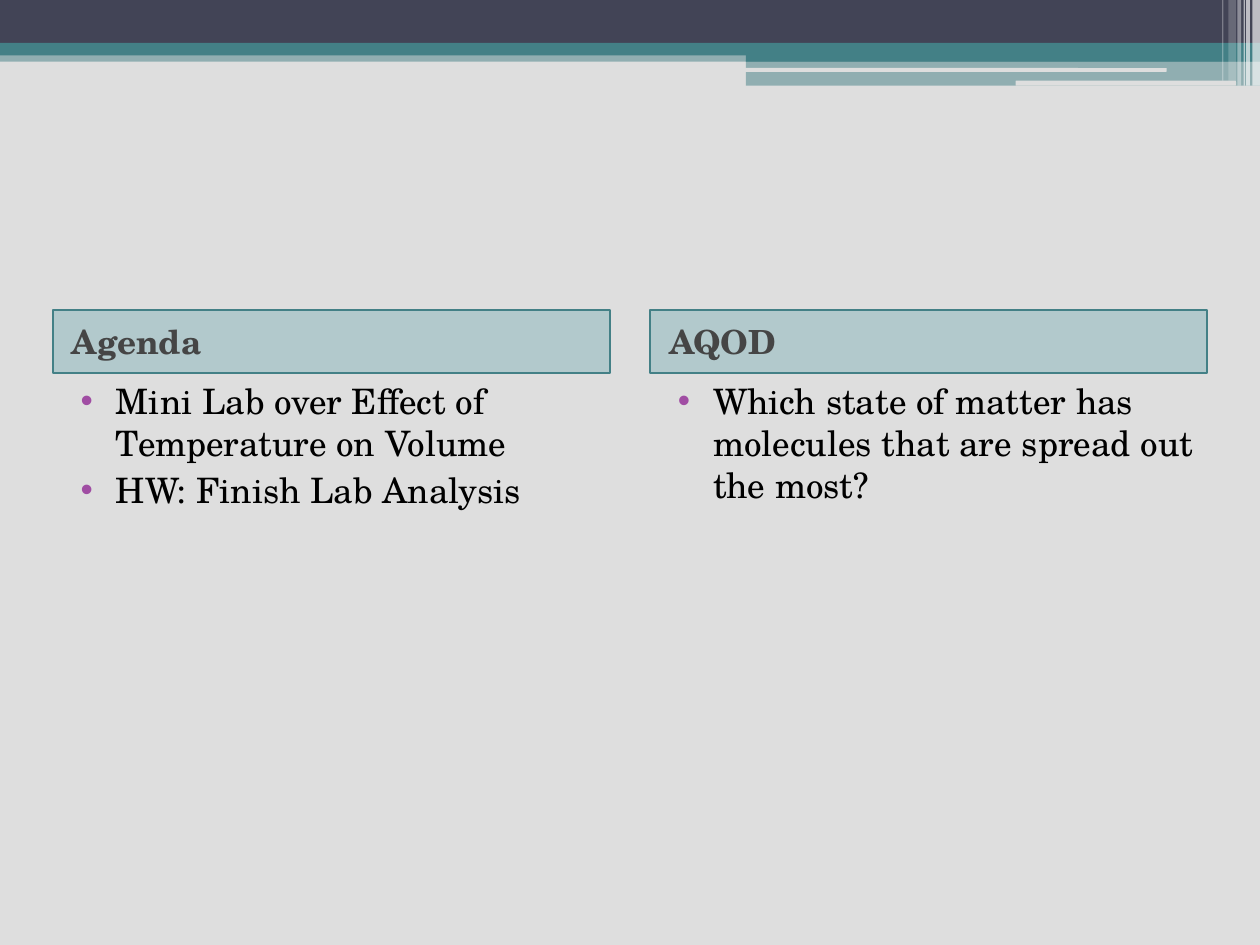
from dataclasses import dataclass

from lxml.etree import SubElement
from pptx import Presentation
from pptx.dml.color import RGBColor
from pptx.enum.shapes import MSO_SHAPE as Preset
from pptx.enum.text import MSO_ANCHOR as Anchor, MSO_AUTO_SIZE as AutoSize
from pptx.oxml.ns import qn
from pptx.shapes.base import BaseShape
from pptx.slide import Slide
from pptx.util import Inches, Pt

SLIDE_WIDTH, SLIDE_HEIGHT = Inches(10), Inches(7.5)
GRID_COLUMNS, GRID_ROWS = 1000, 750


@dataclass(frozen=True)
class Theme:
    font: str = "TeX Gyre Schola"
    background: str = "DEDEDE"
    navy: str = "424456"
    teal: str = "438086"
    white: str = "FFFFFF"
    heading_fill: str = "328E97"
    heading_text: str = "454545"
    body_text: str = "000000"
    bullet: str = "A04DA3"
    heading_size: int = 19
    body_size: int = 20
    space_before: int = 3


@dataclass(frozen=True)
class Area:
    column: int
    row: int
    columns: int
    rows: int


@dataclass(frozen=True)
class Band:
    area: Area
    color: str
    opacity: int = 100
    preset: Preset = Preset.RECTANGLE


@dataclass(frozen=True)
class Panel:
    column: int
    heading_index: int
    list_index: int
    heading: str
    items: tuple[str, ...]


THEME = Theme()
PANEL_COLUMNS = 442
HEADING_ROW, HEADING_ROWS, LIST_ROWS = 246, 50, 425

HEADER_BANDS = (
    Band(Area(0, 40, 1000, 9), THEME.teal, 50),
    Band(Area(0, 0, 1000, 34), THEME.navy),
    Band(Area(0, 34, 1000, 10), THEME.teal),
    Band(Area(592, 39, 408, 10), THEME.teal),
    Band(Area(592, 48, 408, 20), THEME.teal, 50),
    Band(Area(591, 54, 335, 3), THEME.background, preset=Preset.ROUNDED_RECTANGLE),
    Band(Area(806, 64, 175, 4), THEME.background, preset=Preset.ROUNDED_RECTANGLE),
)
CORNER_STRIPES = tuple(
    Band(Area(column, 0, columns, rows), THEME.white, opacity)
    for column, columns, rows, opacity in (
        (994, 6, 68, 65),
        (989, 3, 68, 65),
        (987, 1, 68, 60),
        (982, 3, 68, 40),
        (975, 6, 64, 20),
        (970, 1, 64, 30),
    )
)
PANELS = (
    Panel(42, 1, 2, "Agenda", (
        "Mini Lab over Effect of Temperature on Volume",
        "HW: Finish Lab Analysis",
    )),
    Panel(516, 3, 4, "AQOD", (
        "Which state of matter has molecules that are spread out the most?",
    )),
)


def across(columns: int) -> int:
    return SLIDE_WIDTH * columns // GRID_COLUMNS


def down(rows: int) -> int:
    return SLIDE_HEIGHT * rows // GRID_ROWS


def place(shape: BaseShape, area: Area) -> None:
    shape.left, shape.top = across(area.column), down(area.row)
    shape.width, shape.height = across(area.columns), down(area.rows)


def paint(shape: BaseShape, color: str, opacity: int) -> None:
    shape.fill.solid()
    shape.fill.fore_color.rgb = RGBColor.from_string(color)
    if opacity < 100:
        color_node = shape.fill._xPr.find(f"{qn('a:solidFill')}/{qn('a:srgbClr')}")
        SubElement(color_node, qn("a:alpha"), val=str(opacity * 1000))


def draw_band(slide: Slide, band: Band) -> None:
    area = band.area
    shape = slide.shapes.add_shape(
        band.preset, across(area.column), down(area.row), across(area.columns), down(area.rows)
    )
    shape.shadow.inherit = False
    shape.line.fill.background()
    paint(shape, band.color, band.opacity)


def write(shape: BaseShape, lines: tuple[str, ...], size: int, color: str,
          bold: bool, margin: float, indent: float, anchor: Anchor) -> None:
    frame = shape.text_frame
    frame.text = "\n".join(lines)
    frame.word_wrap = True
    frame.auto_size = AutoSize.NONE
    frame.vertical_anchor = anchor
    for paragraph in frame.paragraphs:
        paragraph.space_before = Pt(THEME.space_before)
        properties = paragraph._p.get_or_add_pPr()
        properties.set("marL", str(Inches(margin)))
        properties.set("indent", str(Inches(indent)))
        for run in paragraph.runs:
            run.font.name = THEME.font
            run.font.size = Pt(size)
            run.font.bold = bold
            run.font.color.rgb = RGBColor.from_string(color)


def add_bullets(shape: BaseShape) -> None:
    for paragraph in shape.text_frame.paragraphs:
        properties = paragraph._p.get_or_add_pPr()
        bullet_color = SubElement(properties, qn("a:buClr"))
        SubElement(bullet_color, qn("a:srgbClr"), val=THEME.bullet)
        SubElement(properties, qn("a:buFont"), typeface="Arial")
        SubElement(properties, qn("a:buChar"), char="•")


def draw_panel(slide: Slide, panel: Panel) -> None:
    placeholders = {shape.placeholder_format.idx: shape for shape in slide.placeholders}
    heading = placeholders[panel.heading_index]
    place(heading, Area(panel.column, HEADING_ROW, PANEL_COLUMNS, HEADING_ROWS))
    paint(heading, THEME.heading_fill, 25)
    heading.line.color.rgb = RGBColor.from_string(THEME.teal)
    heading.line.width = Pt(1)
    write(heading, (panel.heading,), THEME.heading_size, THEME.heading_text,
          True, 0.05, 0, Anchor.MIDDLE)

    topics = placeholders[panel.list_index]
    place(topics, Area(panel.column, HEADING_ROW + HEADING_ROWS, PANEL_COLUMNS, LIST_ROWS))
    write(topics, panel.items, THEME.body_size, THEME.body_text,
          False, 0.4, -0.28, Anchor.TOP)
    add_bullets(topics)


def main() -> None:
    deck = Presentation()
    deck.slide_width, deck.slide_height = SLIDE_WIDTH, SLIDE_HEIGHT
    slide = deck.slides.add_slide(deck.slide_layouts.get_by_name("Comparison"))
    slide.background.fill.solid()
    slide.background.fill.fore_color.rgb = RGBColor.from_string(THEME.background)
    empty_title = slide.shapes.title.element
    empty_title.getparent().remove(empty_title)
    for band in HEADER_BANDS + CORNER_STRIPES:
        draw_band(slide, band)
    for panel in PANELS:
        draw_panel(slide, panel)
    deck.save("out.pptx")


if __name__ == "__main__":
    main()
